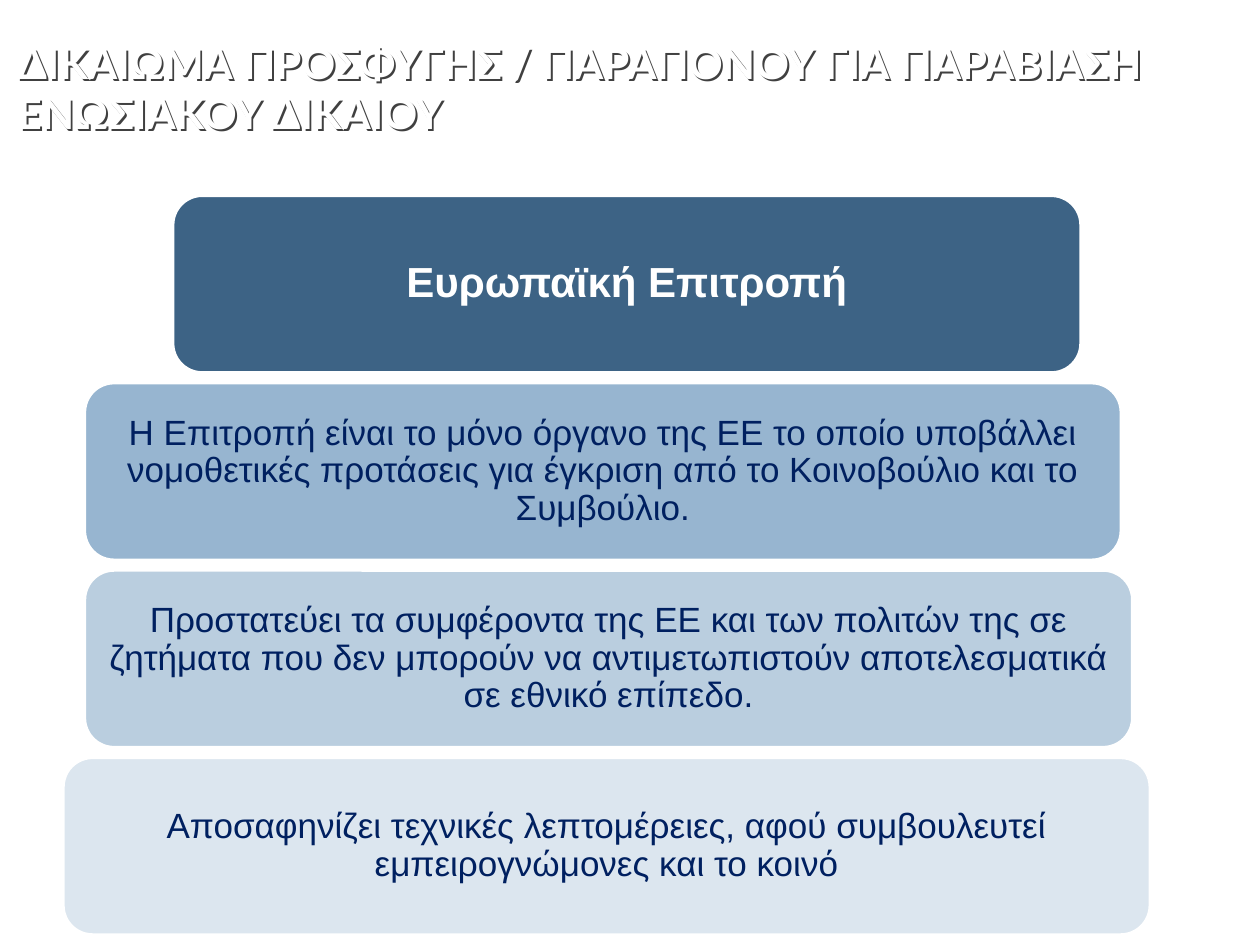
from pptx import Presentation
from pptx.dml.color import RGBColor
from pptx.enum.shapes import MSO_SHAPE as Shape
from pptx.enum.text import MSO_ANCHOR as Anchor, PP_ALIGN as Align
from pptx.oxml import parse_xml
from pptx.util import Inches, Pt

WHITE, NAVY = "FFFFFF", "002060"
ROW_TOP, ROW_PITCH, ROW_HEIGHT = 1.55, 1.487, 1.41
TITLE = "ΔΙΚΑΙΩΜΑ ΠΡΟΣΦΥΓΗΣ / ΠΑΡΑΠΟΝΟΥ ΓΙΑ ΠΑΡΑΒΙΑΣΗ ΕΝΩΣΙΑΚΟΥ ΔΙΚΑΙΟΥ"
ROWS = [
    (1.37, 7.21, "3D6385", WHITE, 24, True, "Ευρωπαϊκή Επιτροπή"),
    (0.67, 8.23, "97B5D0", NAVY, 20, False,
     "Η Επιτροπή είναι το μόνο όργανο της ΕΕ το οποίο υποβάλλει νομοθετικές "
     "προτάσεις για έγκριση από το Κοινοβούλιο και το Συμβούλιο."),
    (0.67, 8.32, "BACEDF", NAVY, 20, False,
     "Προστατεύει τα συμφέροντα της ΕΕ και των πολιτών της σε ζητήματα που δεν "
     "μπορούν να αντιμετωπιστούν αποτελεσματικά σε εθνικό επίπεδο."),
    (0.5, 8.63, "DCE6EF", NAVY, 20, False,
     "Αποσαφηνίζει τεχνικές λεπτομέρειες, αφού συμβουλευτεί "
     "εμπειρογνώμονες και το κοινό"),
]
TITLE_SHADOW = (
    '<a:effectLst xmlns:a="http://schemas.openxmlformats.org/drawingml/2006/main">'
    '<a:outerShdw blurRad="0" dist="20000" dir="2700000" algn="tl" rotWithShape="0">'
    '<a:srgbClr val="000000"><a:alpha val="75000"/></a:srgbClr>'
    '</a:outerShdw></a:effectLst>'
)


def colour(value):
    """Turn a hex string into a colour."""
    return RGBColor.from_string(value)


def style_font(font, name, size, shade, bold):
    """Set the face, size, colour and weight of a font."""
    font.name, font.size, font.bold = name, Pt(size), bold
    font.color.rgb = colour(shade)


def place_title(title, left, top, width, height):
    """Put the shadowed heading in the given box."""
    title.left, title.top = Inches(left), Inches(top)
    title.width, title.height = Inches(width), Inches(height)
    title.fill.background()
    title._element.spPr.append(parse_xml(TITLE_SHADOW))
    frame = title.text_frame
    frame.word_wrap = True
    frame.vertical_anchor = Anchor.MIDDLE
    para = frame.paragraphs[0]
    para.text = TITLE
    para.alignment = Align.LEFT
    style_font(para.font, "Lato", 24, WHITE, True)


def add_row(page, left, top, width, height, fill, shade, size, bold, text):
    """Draw one rounded panel with its centred statement."""
    box = page.shapes.add_shape(Shape.ROUNDED_RECTANGLE, Inches(left), Inches(top),
                                Inches(width), Inches(height))
    box.shadow.inherit = False
    box.fill.solid()
    box.fill.fore_color.rgb = colour(fill)
    box.line.color.rgb = colour(WHITE)
    box.line.width = Pt(2)
    frame = box.text_frame
    frame.word_wrap = True
    frame.vertical_anchor = Anchor.MIDDLE
    frame.margin_left = frame.margin_right = Inches(0.08)
    frame.margin_top = frame.margin_bottom = Inches(0.04)
    para = frame.paragraphs[0]
    para.text = text
    para.alignment = Align.CENTER
    para.line_spacing = 0.9
    style_font(para.font, "Arial", size, shade, bold)


def main():
    """Build and save the slide."""
    deck = Presentation()
    deck.slide_width, deck.slide_height = Inches(10), Inches(7.5)
    page = deck.slides.add_slide(deck.slide_layouts[5])
    place_title(page.shapes.title, 0.04, 0, 9.13, 1.39)
    for index, (left, width, *look) in enumerate(ROWS):
        add_row(page, left, ROW_TOP + index * ROW_PITCH, width, ROW_HEIGHT, *look)
    deck.save("out.pptx")


if __name__ == "__main__":
    main()
